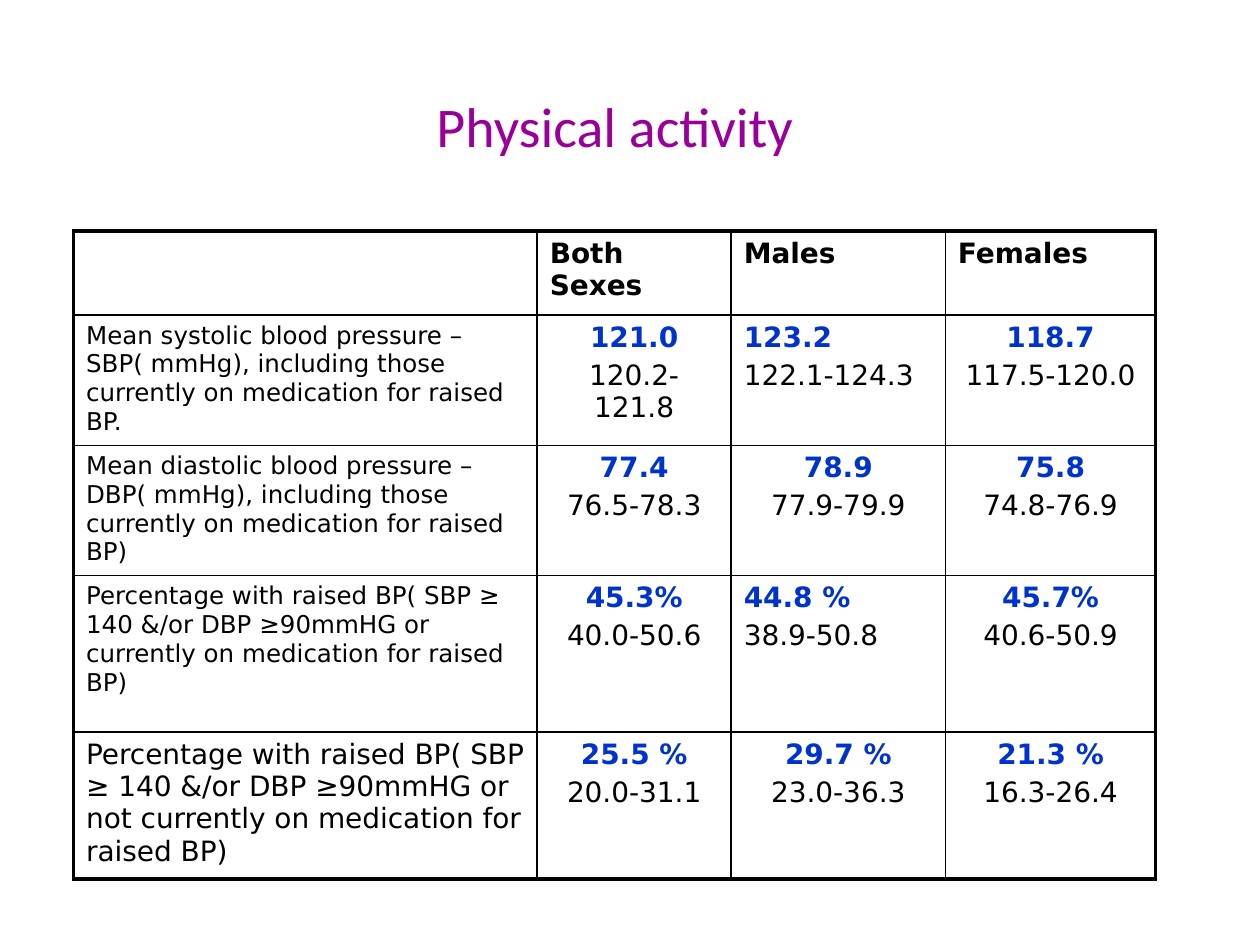
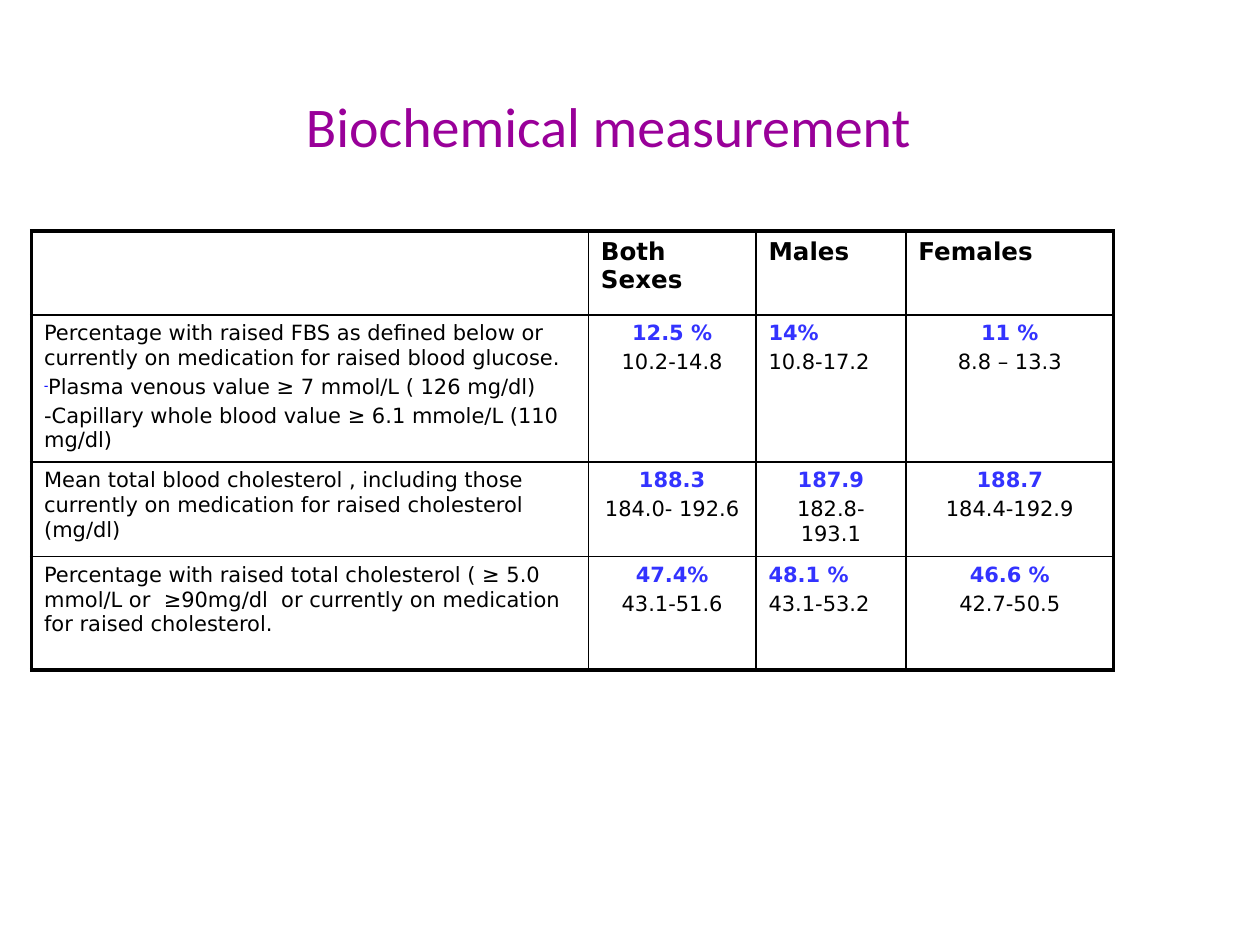
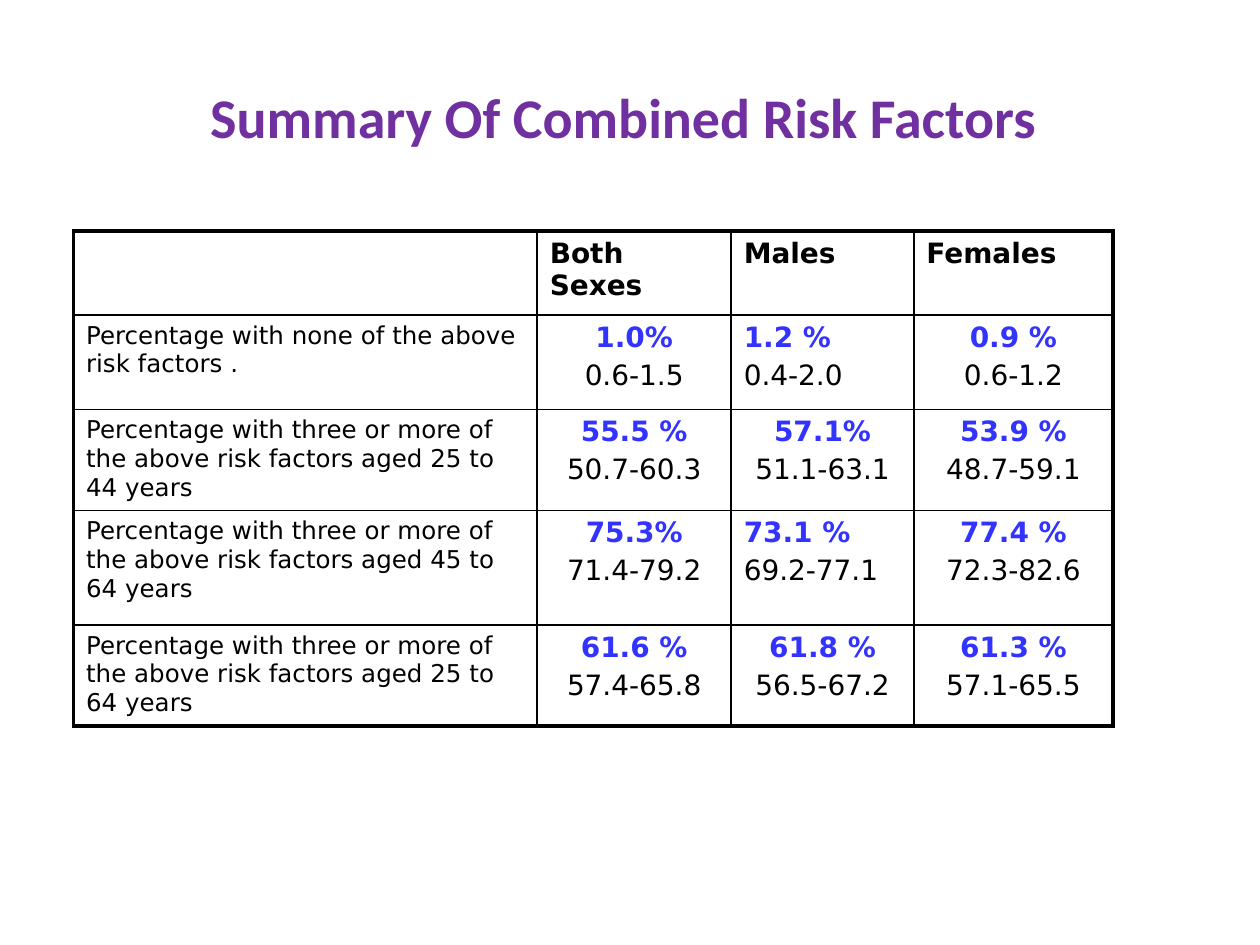
from dataclasses import dataclass

from lxml import etree
from pptx import Presentation
from pptx import util as u
from pptx.dml.color import RGBColor
from pptx.enum import text
from pptx.oxml import ns

COLORS = {
    "ink": "000000",
    "paper": "FFFFFF",
    "magenta": "990099",
    "purple": "7030A0",
    "royal": "0033CC",
    "blue": "3333FF",
    "bullet": "0000FF",
}
TITLE_FONT, BODY_FONT = "Calibri", "DejaVu Sans"
HEADINGS = ("", "Both Sexes", "Males", "Females")
MALES = HEADINGS.index("Males")
THIN, THICK = 1, 2.25
TABLE_TOP = 22  # grid rows
TITLE_BOX = (6, 3.6, 108, 15)  # left, top, width, height in grid units


def grid(units: float) -> int:
    """The 10 inch width holds 120 columns; rows have the same pitch."""
    return u.Inches(units / 12)


@dataclass(frozen=True)
class Title:
    wording: str
    color: str = "magenta"
    bold: bool = False
    end_size: float = 44  # the closing space sets the line height


@dataclass(frozen=True)
class Measure:
    label: tuple[str, ...]  # one entry per paragraph; "•" marks the dash bullet
    results: tuple[tuple[str, str], ...]  # (estimate, interval) per sex group
    height: float
    label_size: float


@dataclass(frozen=True)
class Page:
    title: Title
    left: float
    columns: tuple[float, ...]
    heading_size: float
    result_size: float
    accent: str
    measures: tuple[Measure, ...]


PAGES = (
    Page(
        Title("Physical activity "), 7, (44.16, 18.48, 20.4, 20.04), 16, 16, "royal",
        (
            Measure(
                ("Mean systolic blood pressure – SBP( mmHg), including those currently "
                 "on medication for raised BP.",),
                (("121.0", "120.2-121.8"), ("123.2", "122.1-124.3"), ("118.7", "117.5-120.0")),
                12.12, 14),
            Measure(
                ("Mean diastolic blood pressure – DBP( mmHg), including those currently "
                 "on medication for raised BP)",),
                (("77.4", "76.5-78.3"), ("78.9", "77.9-79.9"), ("75.8", "74.8-76.9")),
                12.2, 14),
            Measure(
                ("Percentage with raised BP( SBP ≥ 140 &/or DBP ≥90mmHG or currently "
                 "on medication for raised BP)",),
                (("45.3%", "40.0-50.6"), ("44.8 %", "38.9-50.8"), ("45.7%", "40.6-50.9")),
                14.9, 14),
            Measure(
                ("Percentage with raised BP( SBP ≥ 140 &/or DBP ≥90mmHG or  not currently "
                 "on medication for raised BP)",),
                (("25.5 %", "20.0-31.1"), ("29.7 %", "23.0-36.3"), ("21.3 %", "16.3-26.4")),
                13.56, 16),
        ),
    ),
    Page(
        Title("Biochemical measurement  "), 3, (53.04, 15.96, 14.28, 19.8), 14, 12, "blue",
        (
            Measure(
                ("Percentage with raised FBS as defined below or currently on medication "
                 "for raised blood glucose.",
                 "•Plasma venous value ≥ 7 mmol/L ( 126 mg/dl)",
                 "-Capillary whole blood value ≥ 6.1 mmole/L (110 mg/dl)"),
                (("12.5 %", "10.2-14.8"), ("14%", "10.8-17.2"), ("11 %", "8.8 – 13.3")),
                13.7, 12),
            Measure(
                ("Mean total blood cholesterol , including those currently on medication "
                 "for raised cholesterol (mg/dl)",),
                (("188.3", "184.0- 192.6"), ("187.9", "182.8-193.1"), ("188.7", "184.4-192.9")),
                9, 12),
            Measure(
                ("Percentage with raised total cholesterol ( ≥ 5.0 mmol/L or  ≥90mg/dl  "
                 "or currently on medication for raised cholesterol.",),
                (("47.4%", "43.1-51.6"), ("48.1 %", "43.1-53.2"), ("46.6 %", "42.7-50.5")),
                10.8, 12),
        ),
    ),
    Page(
        Title("Summary Of Combined Risk Factors", "purple", True, 32),
        7, (44.16, 18.48, 17.4, 18.96), 16, 16, "blue",
        (
            Measure(
                ("Percentage with none of the above risk factors .",),
                (("1.0%", "0.6-1.5"), ("1.2 %", "0.4-2.0"), ("0.9 %", "0.6-1.2")),
                9, 14),
            Measure(
                ("Percentage with three or more of the above risk factors aged 25 to 44 years ",),
                (("55.5 %", "50.7-60.3"), ("57.1%", "51.1-63.1"), ("53.9 %", "48.7-59.1")),
                9.44, 14),
            Measure(
                ("Percentage with three or more of the above risk factors aged 45 to 64 years",),
                (("75.3%", "71.4-79.2"), ("73.1 %", "69.2-77.1"), ("77.4 %", "72.3-82.6")),
                10.92, 14),
            Measure(
                ("Percentage with three or more of the above risk factors aged 25 to 64 years",),
                (("61.6 %", "57.4-65.8"), ("61.8 %", "56.5-67.2"), ("61.3 %", "57.1-65.5")),
                9.3, 14),
        ),
    ),
)


# Text
def add_run(paragraph, wording: str, size: float, color: str = "ink",
            bold: bool = False, face: str = BODY_FONT) -> None:
    run = paragraph.add_run()
    run.text = wording
    for name, value in {"size": u.Pt(size), "bold": bold, "name": face}.items():
        setattr(run.font, name, value)
    run.font.color.rgb = RGBColor.from_string(COLORS[color])


def add_dash(paragraph) -> None:
    properties = paragraph._p.get_or_add_pPr()
    tint = etree.SubElement(properties, ns.qn("a:buClr"))
    etree.SubElement(tint, ns.qn("a:srgbClr"), val=COLORS["bullet"])
    etree.SubElement(properties, ns.qn("a:buSzPct"), val="60000")
    etree.SubElement(properties, ns.qn("a:buChar"), char="-")


def write_cell(cell, lines, size: float, centered: bool = False) -> None:
    """Write (wording, color, bold) lines, each after the first set off by a fifth."""
    for index, (wording, color, bold) in enumerate(lines):
        paragraph = cell.text_frame.paragraphs[0] if index == 0 else cell.text_frame.add_paragraph()
        paragraph.alignment = text.PP_ALIGN.CENTER if centered else text.PP_ALIGN.LEFT
        if index:
            paragraph.space_before = u.Pt(size * 0.2)
        if wording.startswith("•"):
            add_dash(paragraph)
        add_run(paragraph, wording.removeprefix("•"), size, color, bold)


# Table rules
def rule_cell(cell, widths: dict[str, float]) -> None:
    properties = cell._tc.get_or_add_tcPr()
    for position, (side, width) in enumerate(widths.items()):
        line = etree.Element(ns.qn(f"a:ln{side}"), w=str(u.Pt(width)))
        fill = etree.SubElement(line, ns.qn("a:solidFill"))
        etree.SubElement(fill, ns.qn("a:srgbClr"), val=COLORS["ink"])
        properties.insert(position, line)


def style_cells(table) -> None:
    last_row, last_column = len(table.rows) - 1, len(table.columns) - 1
    for row in range(last_row + 1):
        for column in range(last_column + 1):
            cell = table.cell(row, column)
            cell.fill.solid()
            cell.fill.fore_color.rgb = RGBColor.from_string(COLORS["paper"])
            outer = {"L": column == 0, "R": column == last_column,
                     "T": row == 0, "B": row == last_row}
            rule_cell(cell, {side: THICK if edge else THIN for side, edge in outer.items()})


# Slide parts
def add_title(slide, title: Title) -> None:
    frame = slide.shapes.add_textbox(*map(grid, TITLE_BOX)).text_frame
    frame.word_wrap = True
    frame.vertical_anchor = text.MSO_ANCHOR.MIDDLE
    heading = frame.paragraphs[0]
    heading.alignment = text.PP_ALIGN.CENTER
    add_run(heading, title.wording, 32, title.color, title.bold, TITLE_FONT)
    add_run(heading, " ", title.end_size, face=TITLE_FONT)


def add_results(slide, page: Page) -> None:
    heights = (8, *(measure.height for measure in page.measures))
    table = slide.shapes.add_table(
        len(heights), len(HEADINGS), grid(page.left), grid(TABLE_TOP),
        grid(sum(page.columns)), grid(sum(heights))).table
    table.first_row = table.horz_banding = False
    for column, width in zip(table.columns, page.columns):
        column.width = grid(width)
    for row, height in zip(table.rows, heights):
        row.height = grid(height)
    style_cells(table)

    for column, heading in enumerate(HEADINGS):
        if heading:
            write_cell(table.cell(0, column), [(heading, "ink", True)], page.heading_size)
    for row, measure in enumerate(page.measures, 1):
        write_cell(table.cell(row, 0), [(line, "ink", False) for line in measure.label],
                   measure.label_size)
        for column, (estimate, interval) in enumerate(measure.results, 1):
            # Males are set left in every odd row
            centered = column != MALES or row % 2 == 0
            write_cell(table.cell(row, column),
                       [(estimate, page.accent, True), (interval, "ink", False)],
                       page.result_size, centered)


def main() -> None:
    deck = Presentation()
    deck.slide_width, deck.slide_height = grid(120), grid(90)
    for page in PAGES:
        slide = deck.slides.add_slide(deck.slide_layouts[6])
        add_title(slide, page.title)
        add_results(slide, page)
    deck.save("out.pptx")


if __name__ == "__main__":
    main()
